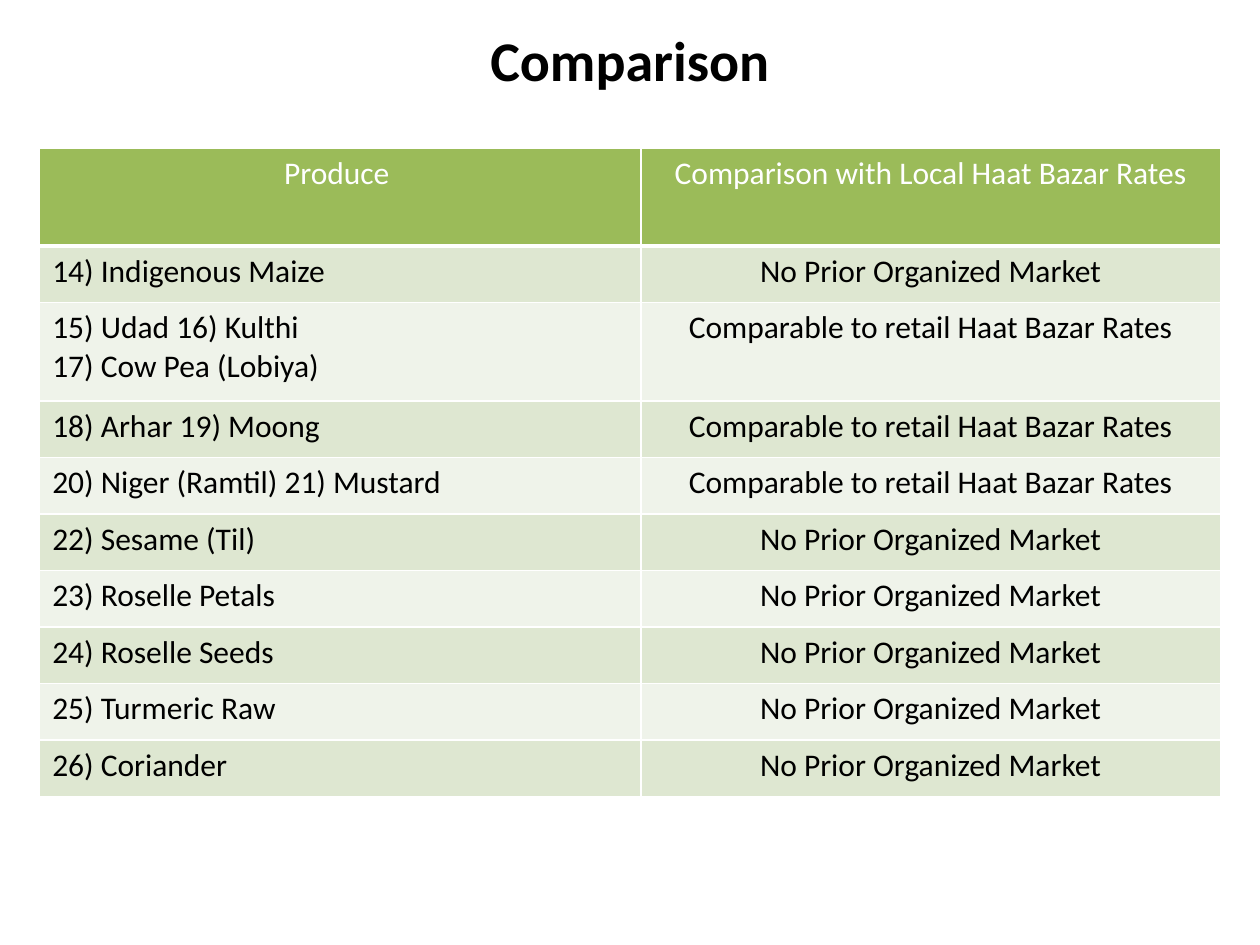
import dataclasses

import pptx
import pptx.dml.color
import pptx.enum.text
import pptx.oxml
import pptx.oxml.ns
import pptx.util

Cm = pptx.util.Cm
ALIGN = pptx.enum.text.PP_ALIGN
ANCHOR = pptx.enum.text.MSO_ANCHOR


@dataclasses.dataclass(frozen=True)
class Theme:
    font: str = "Calibri"
    title_size: int = 32
    body_size: int = 18
    text: str = "000000"
    header_text: str = "FFFFFF"
    header_fill: str = "9BBB59"
    bands: tuple = ("DEE7D1", "EFF3EA")
    border: str = "FFFFFF"
    border_width: int = 1
    header_rule: int = 3


class SlideBuilder:
    def __init__(self, prs, theme):
        self.theme = theme
        self.s = prs.slides.add_slide(prs.slide_layouts[5])

    def add_text(self, tf, text, align, size, color, bold=False):
        formats = {"name": self.theme.font, "size": pptx.util.Pt(size), "bold": bold}
        for i, line in enumerate(text.split("\n")):
            p = tf.paragraphs[0] if i == 0 else tf.add_paragraph()
            p.alignment = align
            r = p.add_run()
            r.text = line
            for name, value in formats.items():
                setattr(r.font, name, value)
            r.font.color.rgb = pptx.dml.color.RGBColor.from_string(color)

    def title(self, text, left, top, width, height):
        sp = self.s.shapes.title
        box = {"left": left, "top": top, "width": width, "height": height}
        for name, value in box.items():
            setattr(sp, name, Cm(value))
        tf = sp.text_frame
        tf.vertical_anchor = ANCHOR.MIDDLE
        self.add_text(tf, text, ALIGN.CENTER, self.theme.title_size, self.theme.text, True)

    def borders(self, cell, bottom):
        t = self.theme
        tc_pr = cell._tc.get_or_add_tcPr()
        widths = dict.fromkeys("LRT", t.border_width) | {"B": bottom}
        for side, width in widths.items():
            tc_pr.append(pptx.oxml.parse_xml(
                f'<a:ln{side} {pptx.oxml.ns.nsdecls("a")} w="{pptx.util.Pt(width)}">'
                f'<a:solidFill><a:srgbClr val="{t.border}"/></a:solidFill>'
                f'</a:ln{side}>'))

    def table(self, rows, left, top, widths, heights):
        t = self.theme
        frame = self.s.shapes.add_table(
            len(rows), len(widths), Cm(left), Cm(top), Cm(sum(widths)), Cm(sum(heights)))
        table = frame.table
        for column, width in zip(table.columns, widths):
            column.width = Cm(width)
        for i, (values, height) in enumerate(zip(rows, heights)):
            table.rows[i].height = Cm(height)
            header = i == 0
            fill = t.header_fill if header else t.bands[(i - 1) % 2]
            color = t.header_text if header else t.text
            for j, value in enumerate(values):
                cell = table.cell(i, j)
                self.borders(cell, t.header_rule if header else t.border_width)
                cell.fill.solid()
                cell.fill.fore_color.rgb = pptx.dml.color.RGBColor.from_string(fill)
                align = ALIGN.CENTER if header or j else ALIGN.LEFT
                self.add_text(cell.text_frame, value, align, t.body_size, color)


NO_MARKET = "No Prior Organized Market"
COMPARABLE = "Comparable to retail Haat Bazar Rates"
ROWS = [
    ("Produce ", "Comparison with Local Haat Bazar Rates"),
    ("14) Indigenous Maize", NO_MARKET),
    ("15) Udad 16) Kulthi\n17) Cow Pea (Lobiya)", COMPARABLE),
    ("18) Arhar 19) Moong", COMPARABLE),
    ("20) Niger (Ramtil) 21) Mustard", COMPARABLE),
    ("22) Sesame (Til)", NO_MARKET),
    ("23) Roselle Petals", NO_MARKET),
    ("24) Roselle Seeds", NO_MARKET),
    ("25) Turmeric Raw", NO_MARKET),
    ("26) Coriander", NO_MARKET),
]
TALL, SHORT = 1.98, 1.14


def main():
    prs = pptx.Presentation()
    prs.slide_width, prs.slide_height = Cm(25.4), Cm(19.05)
    slide = SlideBuilder(prs, Theme())
    heights = [TALL if i in (0, 2) else SHORT for i in range(len(ROWS))]
    slide.table(ROWS, 0.8, 2.98, (12.12, 11.68), heights)
    slide.title("Comparison", 1.27, 0.2, 22.86, 1.98)
    prs.save("out.pptx")


if __name__ == "__main__":
    main()
